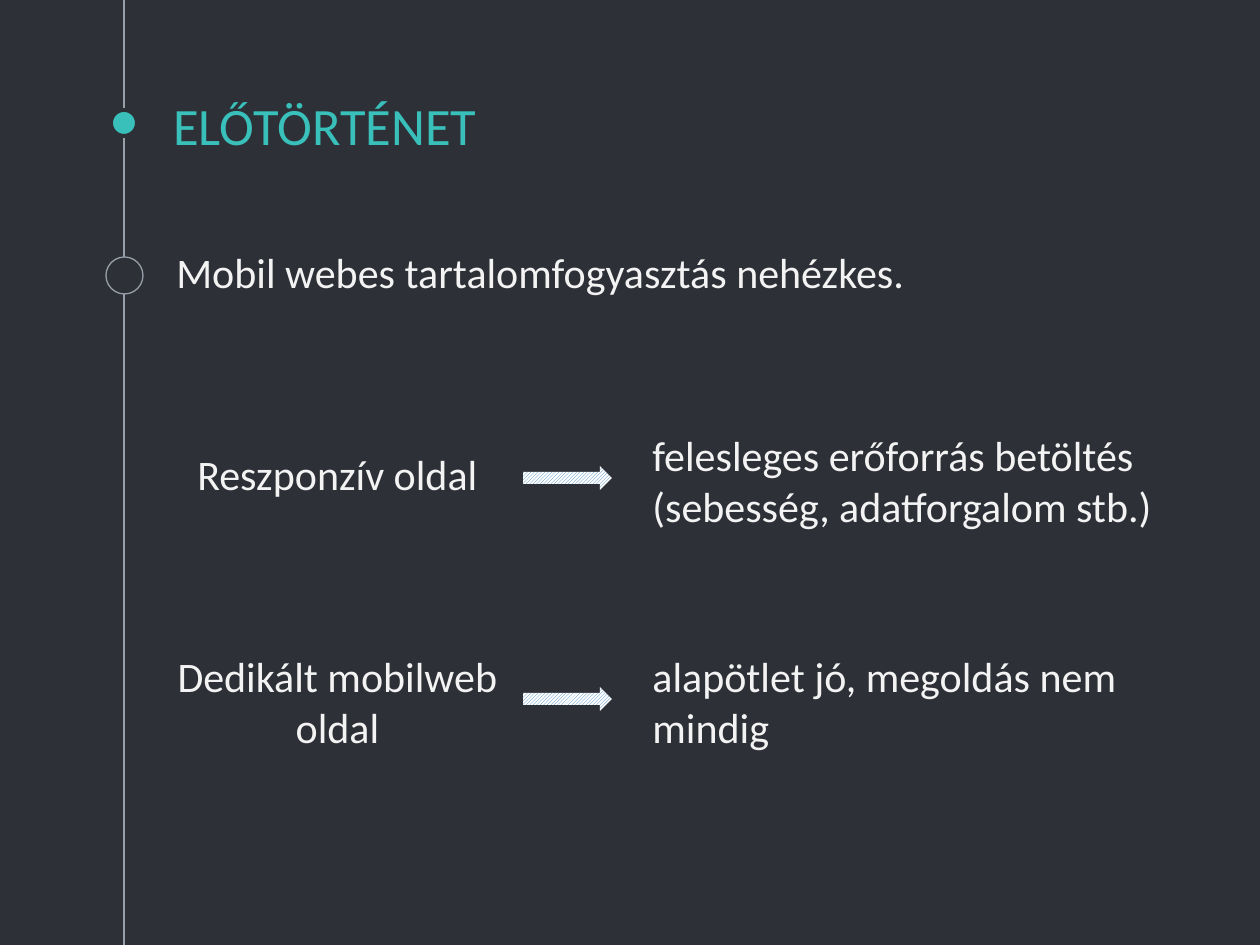
from pptx import Presentation
from pptx.dml.color import RGBColor
from pptx.enum.dml import MSO_PATTERN
from pptx.enum.shapes import MSO_CONNECTOR, MSO_SHAPE
from pptx.enum.text import MSO_ANCHOR, PP_ALIGN
from pptx.oxml.ns import qn
from pptx.util import Pt
from lxml.etree import SubElement

SCALE = 914400 / 126
DARK, TEAL, GREY, PALE = "2E3037", "39C0BA", "999FA9", "F3F3F3"


def px(num):
    """Turn px into EMU."""
    return round(num * SCALE)


def tint(code):
    """Turn a hex string into a colour."""
    return RGBColor.from_string(code)


def text(slide, box, words, size=24, color=PALE, align=PP_ALIGN.LEFT,
         anchor=MSO_ANCHOR.TOP, pad=6):
    """Write words in a box, one paragraph per line."""
    frame = slide.shapes.add_textbox(*map(px, box)).text_frame
    frame.word_wrap = True
    frame.vertical_anchor = anchor
    frame.margin_top = frame.margin_bottom = px(pad)
    frame.text = words
    for para in frame.paragraphs:
        para.alignment = align
        para.font.name = "Calibri"
        para.font.size = Pt(size)
        para.font.color.rgb = tint(color)


def dot(slide, box, fill, line, width):
    """Draw one round mark on the rail."""
    mark = slide.shapes.add_shape(MSO_SHAPE.OVAL, *map(px, box))
    mark.shadow.inherit = False
    mark.fill.solid()
    mark.fill.fore_color.rgb = tint(fill)
    mark.line.color.rgb = tint(line)
    mark.line.width = Pt(width)


def rail(slide, mid, high):
    """Draw the upright line with its two marks."""
    line = slide.shapes.add_connector(
        MSO_CONNECTOR.STRAIGHT, px(mid), px(-1), px(mid), px(high))
    line.line.color.rgb = tint(GREY)
    line.line.width = Pt(0.75)
    SubElement(line._element.spPr, qn("a:effectLst"))
    dot(slide, (mid - 13, 110, 26, 26), TEAL, DARK, 2.25)
    dot(slide, (mid - 18, 257, 37, 37), DARK, GREY, 0.75)


def arrow(slide, box):
    """Draw a hatched arrow."""
    shape = slide.shapes.add_shape(MSO_SHAPE.RIGHT_ARROW, *map(px, box))
    shape.shadow.inherit = False
    shape.fill.patterned()
    shape.fill.pattern = MSO_PATTERN.LIGHT_UPWARD_DIAGONAL
    shape.fill.fore_color.rgb = tint("3A81BA")
    shape.fill.back_color.rgb = tint("FFFFFF")
    shape.line.fill.background()


def row(slide, box, cause, effect, drop=0):
    """Set a cause, an arrow and an effect side by side."""
    left, top, wide, high = box
    text(slide, (left, top + drop, 367, high - 2 * drop), cause,
         align=PP_ALIGN.CENTER)
    arrow(slide, (left + 369, top + 42, 89, 24))
    text(slide, (left + 486, top, wide - 486, high), effect)


def main():
    """Build and save the slide."""
    deck = Presentation()
    deck.slide_width, deck.slide_height = px(1260), px(945)
    slide = deck.slides.add_slide(deck.slide_layouts[6])
    slide.background.fill.solid()
    slide.background.fill.fore_color.rgb = tint(DARK)
    rail(slide, 124, 945)
    text(slide, (161, 106, 945, 63), "ELŐTÖRTÉNET", size=30, color=TEAL,
         anchor=MSO_ANCHOR.BOTTOM, pad=13)
    text(slide, (164, 241, 973, 63),
         "Mobil webes tartalomfogyasztás nehézkes.")
    row(slide, (154, 424, 1086, 115), "Reszponzív oldal",
        "felesleges erőforrás betöltés\n(sebesség, adatforgalom stb.)",
        drop=18)
    row(slide, (154, 645, 1086, 115), "Dedikált mobilweb oldal",
        "alapötlet jó, megoldás nem mindig")
    deck.save("out.pptx")


if __name__ == "__main__":
    main()
